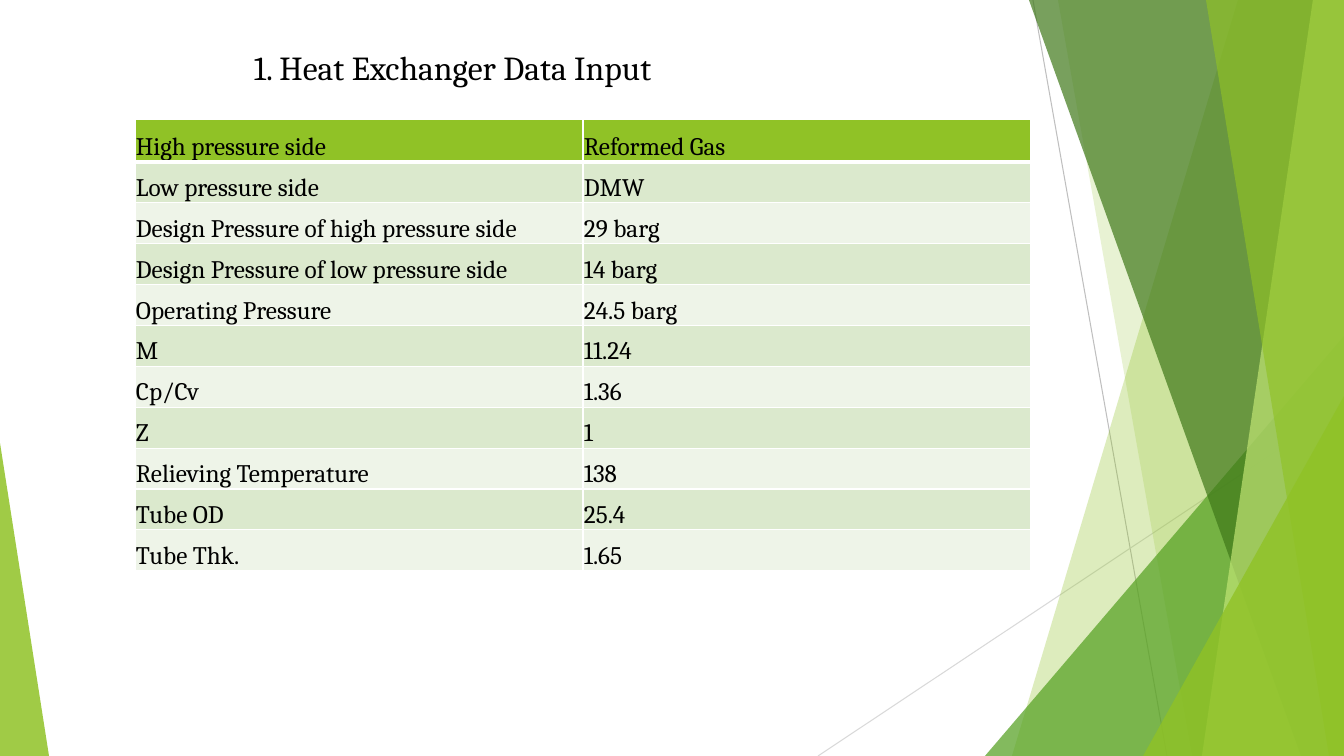
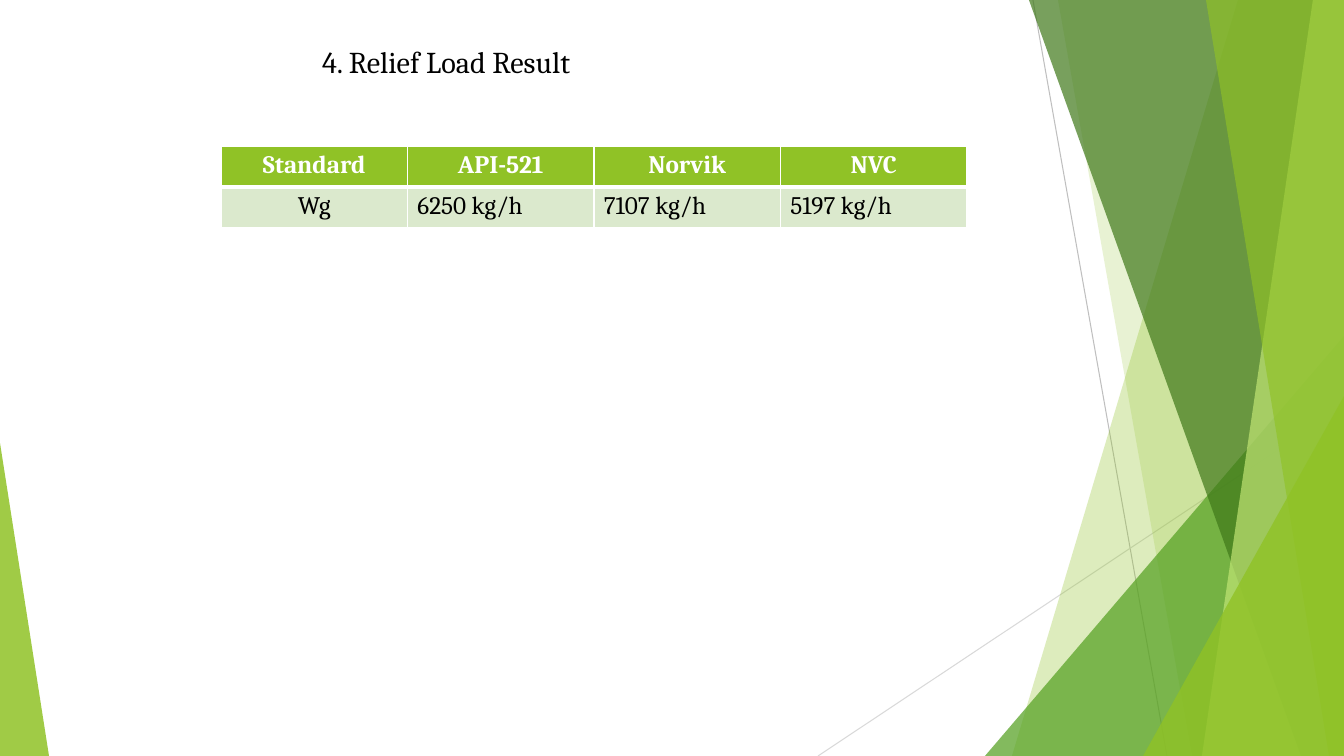
from lxml import etree
from pptx import Presentation
from pptx.dml.color import RGBColor
from pptx.enum.shapes import MSO_CONNECTOR, MSO_SHAPE
from pptx.enum.text import MSO_ANCHOR, PP_ALIGN
from pptx.oxml.ns import qn
from pptx.util import Pt

STRAIGHT = MSO_CONNECTOR.STRAIGHT
TRIANGLE = MSO_SHAPE.ISOSCELES_TRIANGLE
TOP, MIDDLE, BOTTOM = MSO_ANCHOR.TOP, MSO_ANCHOR.MIDDLE, MSO_ANCHOR.BOTTOM
LEFT, CENTER = PP_ALIGN.LEFT, PP_ALIGN.CENTER

PX = 914400 / 100.8
WIDTH, HEIGHT = 1344, 756

BLACK, WHITE = "000000", "FFFFFF"
LIME, GREEN, FOREST, PALE_LIME = "90C226", "54A021", "3F7819", "C0E474"
GREY, LIGHT_GREY = "BFBFBF", "D9D9D9"
BANDS = ("DBE9CD", "EEF4E8")


def emu(px):
    return round(px * PX)


def rgb(color):
    return RGBColor.from_string(color)


def write(tf, text, size=18, color=BLACK, bold=False, align=LEFT):
    p = tf.paragraphs[0]
    p.alignment = align
    r = p.add_run()
    r.text = text
    r.font.name = "Cambria"
    r.font.size = Pt(size)
    r.font.bold = bold
    r.font.color.rgb = rgb(color)


def set_margins(target, left, top, right, bottom):
    target.margin_left, target.margin_top = emu(left), emu(top)
    target.margin_right, target.margin_bottom = emu(right), emu(bottom)


def set_borders(cell, top, bottom):
    """Draw white cell edges, with the top and bottom widths in points."""
    tc_pr = cell._tc.get_or_add_tcPr()
    edges = (("lnL", 1), ("lnR", 1), ("lnT", top), ("lnB", bottom))
    for i, (tag, width) in enumerate(edges):
        ln = etree.Element(qn(f"a:{tag}"), w=str(Pt(width)))
        fill = etree.SubElement(ln, qn("a:solidFill"))
        etree.SubElement(fill, qn("a:srgbClr"), val=WHITE)
        tc_pr.insert(i, ln)


class Deck:
    def __init__(self):
        self.prs = Presentation()
        self.prs.slide_width = emu(WIDTH)
        self.prs.slide_height = emu(HEIGHT)
        self.s = None

    def slide(self):
        """Start a slide with the shared background and facets."""
        self.s = self.prs.slides.add_slide(self.prs.slide_layouts[6])
        fill = self.s.background.fill
        fill.solid()
        fill.fore_color.rgb = rgb(WHITE)
        self.line(1033, 0, 1167, HEIGHT, GREY)
        self.line(WIDTH, 406, 818, HEIGHT, LIGHT_GREY)
        self.shard(1238, 1012, LIME, 30)
        self.shard(1058, 1192, LIME, 20)
        self.triangle(985, 336, 359, 1, GREEN, 72)
        self.shard(1029, 1301, FOREST, 70)
        self.shard(1313, 1202, PALE_LIME, 70)
        self.shard(1206, 1329, LIME, 65)
        self.triangle(1143, 396, 201, 1, LIME, 80)
        self.triangle(0, 443, 49, 0, LIME, 85)

    def line(self, x1, y1, x2, y2, color):
        c = self.s.shapes.add_connector(STRAIGHT, emu(x1), emu(y1), emu(x2), emu(y2))
        c.line.color.rgb = rgb(color)
        c.line.width = Pt(0.75)
        etree.SubElement(c._element.spPr, qn("a:effectLst"))

    def paint(self, sp, color, opacity):
        sp.shadow.inherit = False
        sp.line.fill.background()
        sp.fill.solid()
        sp.fill.fore_color.rgb = rgb(color)
        clr = sp._element.spPr.find(f".//{qn('a:srgbClr')}")
        etree.SubElement(clr, qn("a:alpha"), val=str(opacity * 1000))

    def shard(self, top_x, bottom_x, color, opacity):
        """Fill from a slanted left edge to the right side of the slide."""
        builder = self.s.shapes.build_freeform(top_x, 0, scale=PX)
        builder.add_line_segments([(WIDTH, 0), (WIDTH, HEIGHT), (bottom_x, HEIGHT)])
        self.paint(builder.convert_to_shape(), color, opacity)

    def triangle(self, x, y, w, apex, color, opacity):
        """Stand a triangle on the bottom edge; apex runs from 0 left to 1 right."""
        sp = self.s.shapes.add_shape(TRIANGLE, emu(x), emu(y), emu(w), emu(HEIGHT - y))
        sp.adjustments[0] = apex
        self.paint(sp, color, opacity)

    def title(self, text, x, y, size):
        sp = self.s.shapes.add_textbox(emu(x), emu(y), emu(640), emu(40))
        tf = sp.text_frame
        tf.word_wrap = True
        tf.vertical_anchor = MIDDLE
        set_margins(tf, 0, 0, 0, 0)
        write(tf, text, size=size)

    def table(self, rows, x, y, w, h, header_h, style_cell):
        """Add a banded table; style_cell(row, col) gives anchor, margins and text format."""
        n_rows, n_cols = len(rows), len(rows[0])
        frame = self.s.shapes.add_table(n_rows, n_cols, emu(x), emu(y), emu(w), emu(h))
        table = frame.table
        for col in table.columns:
            col.width = emu(w / n_cols)
        for i, row in enumerate(rows):
            table.rows[i].height = emu((h - header_h) / (n_rows - 1) if i else header_h)
            for j, text in enumerate(row):
                cell = table.cell(i, j)
                anchor, margins, text_format = style_cell(i, j)
                cell.vertical_anchor = anchor
                set_margins(cell, *margins)
                cell.fill.solid()
                cell.fill.fore_color.rgb = rgb(BANDS[(i - 1) % 2] if i else LIME)
                set_borders(cell, top=3 if i == 1 else 1, bottom=1 if i else 3)
                write(cell.text_frame, text, **text_format)


def input_cell(row, col):
    return BOTTOM, (1, 1, 1, 0), {}


def result_cell(row, col):
    text_format = {"align": CENTER if row == 0 or col == 0 else LEFT}
    if row == 0:
        text_format.update(color=WHITE, bold=True)
    return TOP, (10, 5, 10, 5), text_format


INPUTS = [
    ("High pressure side", "Reformed Gas"),
    ("Low pressure side", "DMW"),
    ("Design Pressure of high pressure side", "29 barg"),
    ("Design Pressure of low pressure side", "14 barg"),
    ("Operating Pressure", "24.5 barg"),
    ("M", "11.24"),
    ("Cp/Cv", "1.36"),
    ("Z", "1"),
    ("Relieving Temperature", "138"),
    ("Tube OD", "25.4"),
    ("Tube Thk.", "1.65"),
]
RESULTS = [
    ("Standard", "API-521", "Norvik", "NVC"),
    ("Wg", "6250 kg/h", "7107 kg/h", "5197 kg/h"),
]


def main():
    deck = Deck()

    deck.slide()
    deck.title("1. Heat Exchanger Data Input", 254, 47, 24)
    deck.table(INPUTS, 135, 119, 896, 452, 43, input_cell)

    deck.slide()
    deck.title("4. Relief Load Result", 322, 41, 21.6)
    deck.table(RESULTS, 221, 146, 746, 82, 41, result_cell)

    deck.prs.save("out.pptx")


if __name__ == "__main__":
    main()
